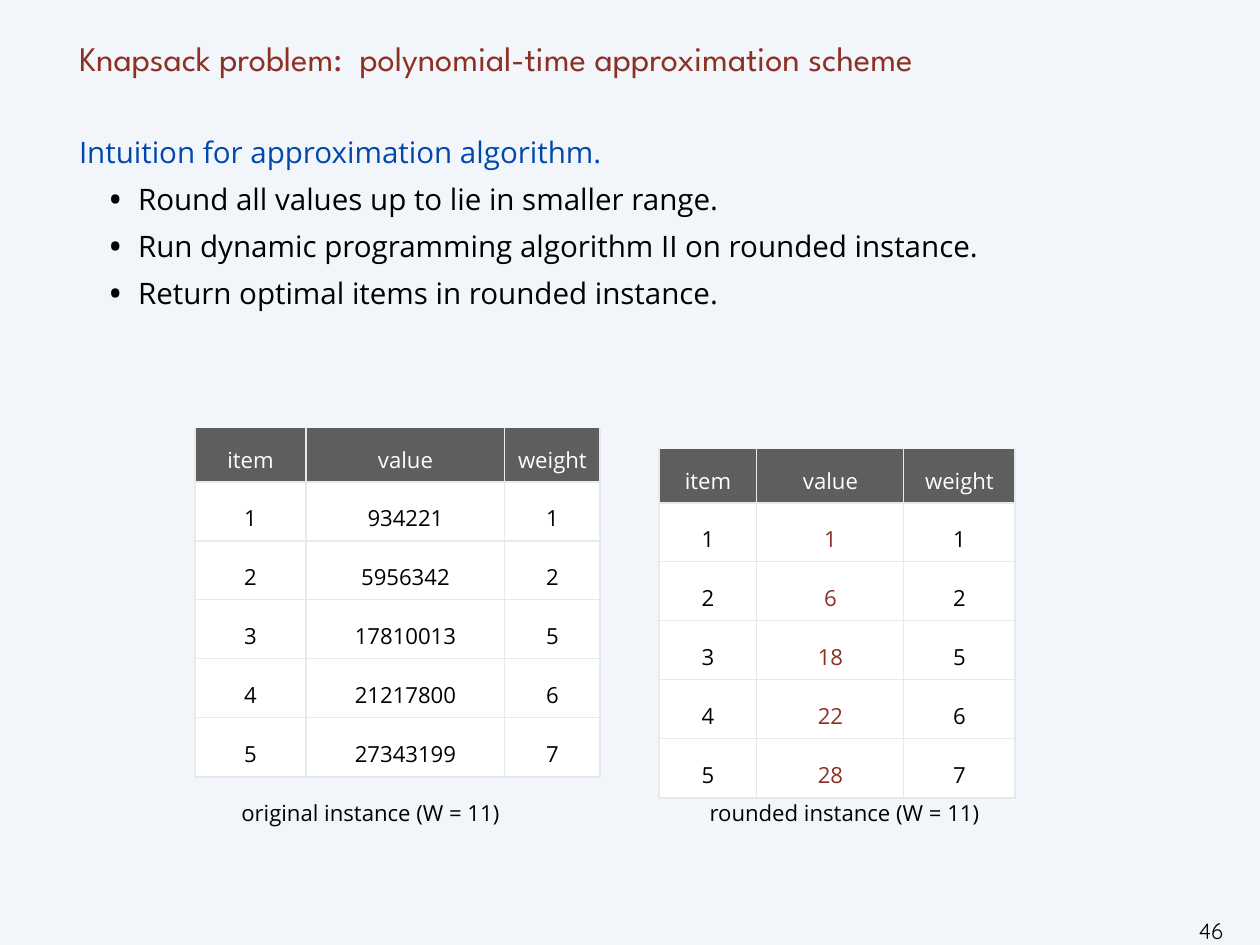
from lxml.etree import SubElement
from pptx import Presentation
from pptx.dml.color import RGBColor
from pptx.enum.text import MSO_ANCHOR as Anchor, PP_ALIGN as Align
from pptx.oxml.ns import qn
from pptx.util import Pt

PX = 10320  # EMU per px
RED = RGBColor(0x8D, 0x31, 0x24)
BLUE = RGBColor(0x00, 0x48, 0xAA)
BLACK = RGBColor(0x00, 0x00, 0x00)
WHITE = RGBColor(0xFF, 0xFF, 0xFF)
HEADER_GRAY = RGBColor(0x5E, 0x5E, 0x5E)
BORDER_GRAY = RGBColor(0xE7, 0xEA, 0xEB)
BACKGROUND = RGBColor(0xF2, 0xF6, 0xFA)
BODY_FONT = "Open Sans"


def add_text_frame(left, top, width, height):
    """Add a wrapping text box without margins and return its text frame."""
    box = slide.shapes.add_textbox(left * PX, top * PX, width * PX, height * PX)
    frame = box.text_frame
    frame.word_wrap = True
    frame.margin_left = frame.margin_right = 0
    frame.margin_top = frame.margin_bottom = 0
    return frame


def write(paragraph, text, size, color, spacing, font=BODY_FONT, align=Align.LEFT):
    paragraph.alignment = align
    paragraph.line_spacing = spacing
    run = paragraph.add_run()
    run.text = text
    run.font.size = Pt(size)
    run.font.name = font
    run.font.color.rgb = color


presentation = Presentation()
presentation.slide_width = 1260 * PX
presentation.slide_height = 945 * PX
slide = presentation.slides.add_slide(presentation.slide_layouts[6])
slide.background.fill.solid()
slide.background.fill.fore_color.rgb = BACKGROUND

# Page number
frame = add_text_frame(1181, 927, 60, 18)
write(frame.paragraphs[0], "46", 18, BLACK, Pt(14), "Quicksand", Align.CENTER)

# Title
frame = add_text_frame(79, 0, 1102, 78)
frame.vertical_anchor = Anchor.BOTTOM
write(frame.paragraphs[0], "Knapsack problem:  polynomial-time approximation scheme",
      28, RED, Pt(38), "League Spartan")

# Intuition and its bullets
frame = add_text_frame(79, 123, 1102, 792)
write(frame.paragraphs[0], "Intuition for approximation algorithm.", 24, BLUE, Pt(38))
for step in ("Round all values up to lie in smaller range.",
             "Run dynamic programming algorithm II on rounded instance.",
             "Return optimal items in rounded instance."):
    paragraph = frame.add_paragraph()
    paragraph.level = 1
    write(paragraph, step, 24, BLACK, Pt(38))
    properties = paragraph._p.get_or_add_pPr()
    properties.set("marL", str(59 * PX))
    properties.set("indent", str(-30 * PX))
    SubElement(properties, qn("a:buSzPct"), val="130000")
    SubElement(properties, qn("a:buFont"), typeface=BODY_FONT)
    SubElement(properties, qn("a:buChar"), char="•")

# Instance tables with captions
weights = (1, 2, 5, 6, 7)
instances = (
    ("original instance (W = 11)", 200, 195, 428, (111, 199, 95),
     (934221, 5956342, 17810013, 21217800, 27343199), BLACK),
    ("rounded instance (W = 11)", 674, 659, 449, (98, 147, 111),
     (1, 6, 18, 22, 28), RED),
)
for caption, caption_left, left, top, widths, values, value_color in instances:
    frame = add_text_frame(caption_left, 791, 341, 22)
    write(frame.paragraphs[0], caption, 18, BLACK, 1.3, align=Align.CENTER)

    rows = [("item", "value", "weight"), *zip(range(1, 6), values, weights)]
    heights = [54] + [59] * len(values)
    last_row, last_column = len(rows) - 1, len(widths) - 1
    table = slide.shapes.add_table(len(rows), len(widths), left * PX, top * PX,
                                   sum(widths) * PX, sum(heights) * PX).table
    table.first_row = table.horz_banding = False
    for column, width in zip(table.columns, widths):
        column.width = width * PX
    for row, height in zip(table.rows, heights):
        row.height = height * PX

    for r, row in enumerate(rows):
        for c, content in enumerate(row):
            cell = table.cell(r, c)
            header = r == 0
            margin = (5 if header else 12) * PX
            cell.margin_left = cell.margin_right = margin
            cell.margin_top = cell.margin_bottom = margin
            cell.vertical_anchor = Anchor.MIDDLE

            # The frame is 2.5 pt, inner lines are 1 pt, and the top is open
            line_widths = {"a:lnL": 2.5 if c == 0 else 1,
                           "a:lnR": 2.5 if c == last_column else 1,
                           "a:lnT": 0 if header else 1,
                           "a:lnB": 2.5 if r == last_row else 1}
            cell_properties = cell._tc.get_or_add_tcPr()
            for side, points in line_widths.items():
                line = SubElement(cell_properties, qn(side), w=str(Pt(points)))
                if points:
                    fill = SubElement(line, qn("a:solidFill"))
                    SubElement(fill, qn("a:srgbClr"), val=str(BORDER_GRAY))
                else:
                    SubElement(line, qn("a:noFill"))
            cell.fill.solid()
            cell.fill.fore_color.rgb = HEADER_GRAY if header else WHITE

            color = WHITE if header else value_color if c == 1 else BLACK
            write(cell.text_frame.paragraphs[0], str(content), 18, color, 1.3,
                  align=Align.CENTER)

presentation.save("out.pptx")
